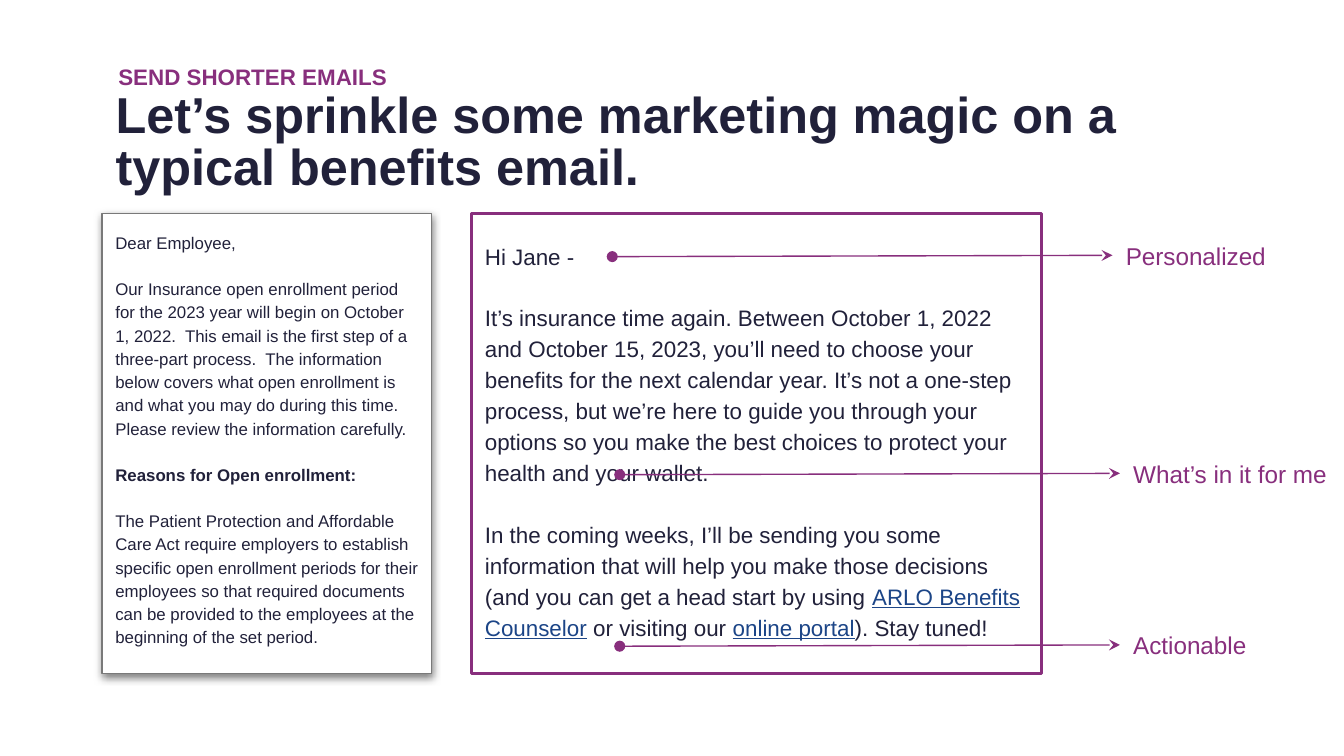
from dataclasses import dataclass
from lxml.etree import SubElement
from pptx import Presentation
from pptx.dml.color import RGBColor
from pptx.enum.shapes import MSO_CONNECTOR, MSO_SHAPE
from pptx.enum.text import MSO_ANCHOR, MSO_AUTO_SIZE, PP_ALIGN
from pptx.oxml.ns import qn
from pptx.util import Pt


@dataclass(frozen=True)
class Theme:
    font: str = "Arial"
    ink: str = "21213A"
    accent: str = "882F7D"
    link: str = "1C4587"
    border: str = "797979"
    paper: str = "FFFFFF"
    shade: str = "000000"
    title: float = 27
    label: float = 13
    email: float = 12
    eyebrow: float = 12
    fine: float = 9
    inset: float = 7.2


def color(value):
    return RGBColor.from_string(value)


class SlideBuilder:
    def __init__(self, deck, theme):
        self.theme = theme
        self.slide = deck.slides.add_slide(deck.slide_layouts[5])
        self.slide.background.fill.solid()
        self.slide.background.fill.fore_color.rgb = color(theme.paper)

    def format_frame(self, frame, anchor=MSO_ANCHOR.TOP, inset=None, bottom=None):
        inset = self.theme.inset if inset is None else inset
        frame.word_wrap = True
        frame.auto_size = MSO_AUTO_SIZE.NONE
        frame.vertical_anchor = anchor
        frame.margin_left = frame.margin_right = frame.margin_top = Pt(inset)
        frame.margin_bottom = Pt(inset if bottom is None else bottom)

    def format_para(self, para, size, ink, bold=False, spacing=None):
        para.alignment = PP_ALIGN.LEFT
        para.line_spacing = spacing
        for span in para.runs:
            span.font.name = self.theme.font
            span.font.size = Pt(size)
            span.font.bold = bold
            span.font.color.rgb = color(ink)

    def title(self, text, left, top, width, height):
        title = self.slide.shapes.title
        title.left, title.top = Pt(left), Pt(top)
        title.width, title.height = Pt(width), Pt(height)
        title.text_frame.text = text
        self.format_frame(title.text_frame)
        self.format_para(title.text_frame.paragraphs[0], self.theme.title,
                         self.theme.ink, True, 0.85)

    def text(self, text, left, top, width, height, size, bold=False, inset=None):
        box = self.slide.shapes.add_textbox(Pt(left), Pt(top), Pt(width), Pt(height))
        box.text_frame.text = text
        self.format_frame(box.text_frame, inset=inset)
        self.format_para(box.text_frame.paragraphs[0], size, self.theme.accent, bold)

    def email(self, paragraphs, left, width, size, border, weight, gap, bottom,
              heading=None, links=()):
        box = self.slide.shapes.add_shape(MSO_SHAPE.RECTANGLE, Pt(left), Pt(114.5),
                                          Pt(width), Pt(246.2))
        box.shadow.inherit = False
        box.fill.solid()
        box.fill.fore_color.rgb = color(self.theme.paper)
        box.line.color.rgb = color(border)
        box.line.width = Pt(weight)
        frame = box.text_frame
        self.format_frame(frame, MSO_ANCHOR.MIDDLE, bottom=bottom)
        for index, parts in enumerate(paragraphs):
            para = frame.paragraphs[0] if index == 0 else frame.add_paragraph()
            for part in parts:
                para.add_run().text = part
            self.format_para(para, size, self.theme.ink, index == heading, 1.15)
            para.space_before = Pt(gap if index else 0)
            for span in para.runs:
                if span.text in links:
                    span.font.underline = True
                    span.font.color.rgb = color(self.theme.link)
        return box

    def drop_shadow(self, box):
        effects = box._element.spPr.find(qn("a:effectLst"))
        shadow = SubElement(effects, qn("a:outerShdw"), blurRad=str(Pt(4.5)),
                            dist=str(Pt(1.5)), dir="5400000", algn="bl", rotWithShape="0")
        shade = SubElement(shadow, qn("a:srgbClr"), val=self.theme.shade)
        SubElement(shade, qn("a:alpha"), val="50000")

    def callout(self, text, left, middle):
        arrow = self.slide.shapes.add_connector(
            MSO_CONNECTOR.STRAIGHT, Pt(left - 268), Pt(middle), Pt(left), Pt(middle - 0.7))
        arrow.line.color.rgb = color(self.theme.accent)
        arrow.line.width = Pt(0.75)
        line = arrow.line._get_or_add_ln()
        SubElement(line, qn("a:headEnd"), type="oval", w="med", len="med")
        SubElement(line, qn("a:tailEnd"), type="stealth", w="med", len="med")
        SubElement(arrow._element.spPr, qn("a:effectLst"))
        self.text(text, left, middle - 15.5, 403, 30, self.theme.label)


def main():
    deck = Presentation()
    deck.slide_width, deck.slide_height = Pt(720), Pt(405)
    theme = Theme()
    page = SlideBuilder(deck, theme)
    page.title("Let’s sprinkle some marketing magic on a typical benefits email.",
               54.7, 42.5, 605.5, 56.2)

    long_email = [
        ["Dear Employee,"],
        ["Our Insurance open enrollment period for the 2023 year will begin on "
         "October 1, 2022.  This email is the first step of a three-part process.  "
         "The information below covers what open enrollment is and what you may do "
         "during this time.  Please review the information carefully."],
        ["Reasons for Open enrollment:"],
        ["The Patient Protection and Affordable Care Act require employers to "
         "establish specific open enrollment periods for their employees so that "
         "required documents can be provided to the employees at the beginning of "
         "the set period."],
    ]
    box = page.email(long_email, 54.7, 176.4, theme.fine, theme.border, 0.75,
                     gap=12.4, bottom=12.7, heading=2)
    page.drop_shadow(box)

    links = ("ARLO Benefits Counselor", "online portal")
    short_email = [
        ["Hi Jane -"],
        ["It’s insurance time again. Between October 1, 2022 and October 15, 2023, "
         "you’ll need to choose your benefits for the next calendar year. It’s not a "
         "one-step process, but we’re here to guide you through your options so you "
         "make the best choices to protect your health and your wallet."],
        ["In the coming weeks, I’ll be sending you some information that will help "
         "you make those decisions (and you can get a head start by using ",
         links[0], " or visiting our ", links[1], "). Stay tuned!"],
    ]
    page.email(short_email, 252.7, 305.3, theme.email, theme.accent, 1.5,
               gap=16.6, bottom=11.3, links=links)

    for text, left, middle in (("Personalized", 596, 137.5),
                               ("What’s in it for me", 600, 254.3),
                               ("Actionable", 600, 346.2)):
        page.callout(text, left, middle)
    page.text("SEND SHORTER EMAILS", 63.4, 33.8, 310, 18, theme.eyebrow, True, 0)
    deck.save("out.pptx")


if __name__ == "__main__":
    main()
